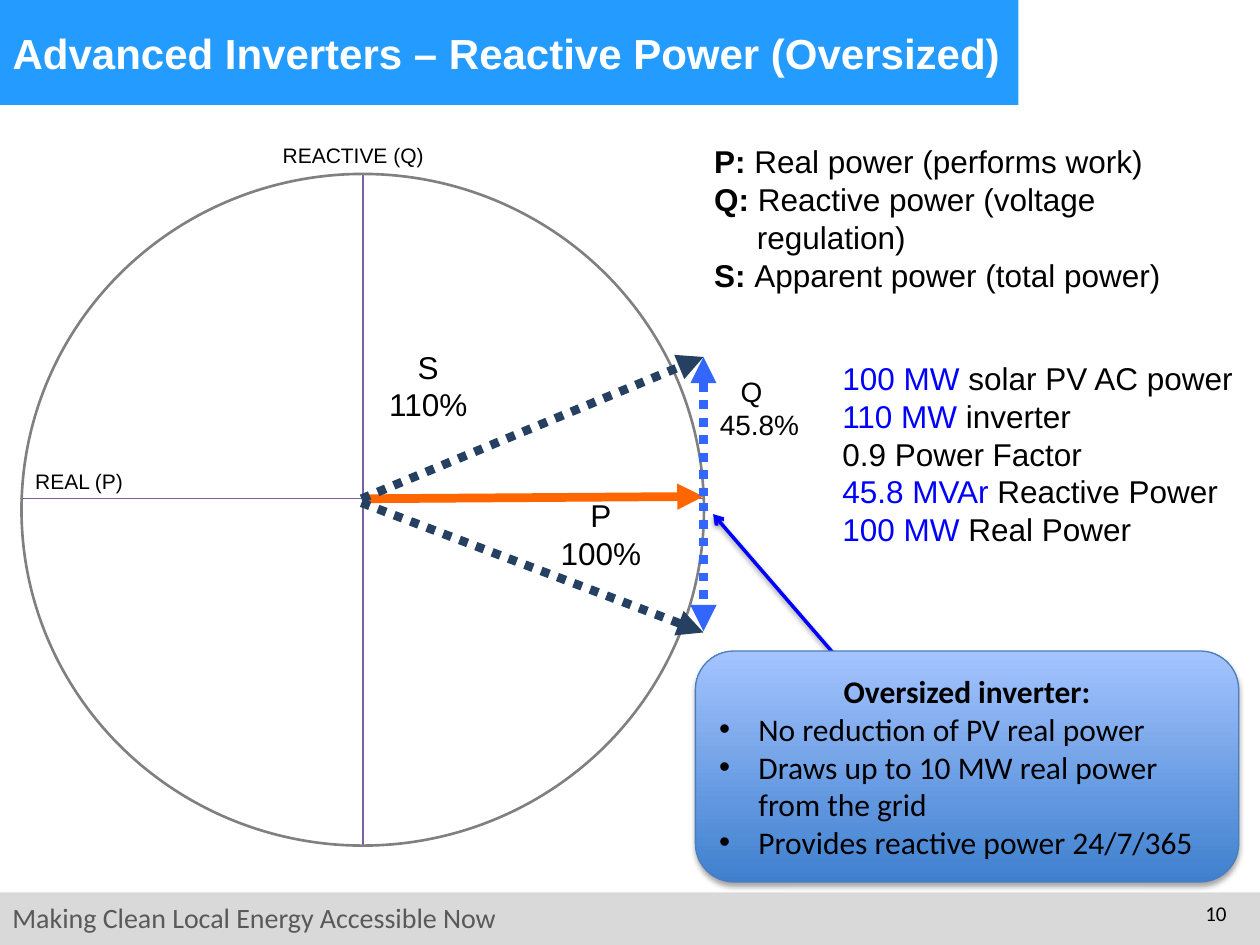
import pptx
import pptx.dml.color
import pptx.enum.dml
import pptx.enum.shapes
import pptx.enum.text
import pptx.oxml
import pptx.oxml.ns
import pptx.util

Pt = pptx.util.Pt
RGBColor = pptx.dml.color.RGBColor
Align = pptx.enum.text.PP_ALIGN
Anchor = pptx.enum.text.MSO_ANCHOR
Shape = pptx.enum.shapes.MSO_SHAPE

BLACK = RGBColor(0x00, 0x00, 0x00)
WHITE = RGBColor(0xFF, 0xFF, 0xFF)
BANNER = RGBColor(0x24, 0x9C, 0xFF)
FOOTER = RGBColor(0xD9, 0xD9, 0xD9)
FOOTER_TEXT = RGBColor(0x59, 0x59, 0x59)
AXIS = RGBColor(0x7D, 0x60, 0xA0)
CIRCLE = RGBColor(0x80, 0x80, 0x80)
REAL = RGBColor(0xFF, 0x66, 0x00)
APPARENT = RGBColor(0x25, 0x40, 0x61)
REACTIVE = RGBColor(0x33, 0x66, 0xFF)
HIGHLIGHT = RGBColor(0x00, 0x00, 0xFF)
CALLOUT_EDGE = RGBColor(0x4B, 0x7E, 0xBC)
CALLOUT_DARK = RGBColor(0x3F, 0x80, 0xCE)
CALLOUT_LIGHT = RGBColor(0xA4, 0xC4, 0xFF)


def add_child(parent, tag, **attributes):
    """Append a DrawingML element and return it."""
    child = pptx.oxml.parse_xml(f"<a:{tag} {pptx.oxml.ns.nsdecls('a')}/>")
    for name, value in attributes.items():
        child.set(name, str(value))
    parent.append(child)
    return child


def set_shadow(shape, opacity=0, distance=0):
    """Replace the theme shadow with a soft downward one, or with none."""
    effects = add_child(shape._element.spPr, "effectLst")
    if opacity:
        shadow = add_child(effects, "outerShdw", blurRad=Pt(3.1), dist=Pt(distance),
                           dir=90 * 60000, rotWithShape=0)
        color = add_child(shadow, "srgbClr", val=BLACK)
        add_child(color, "alpha", val=opacity * 1000)


def write_text(para, text, size=18, font="Arial", color=BLACK, bold=False):
    """Add one formatted span of text to a paragraph."""
    span = para.add_run()
    span.text = text
    span.font.size = Pt(size)
    span.font.name = font
    span.font.bold = bold
    span.font.color.rgb = color


def write_lines(frame, lines, align=Align.LEFT, indent=0, hanging=0, bullet=None, **style):
    """Write each line, given as (text, overrides) spans, as a paragraph."""
    for line in lines:
        first = not frame.paragraphs[0].runs
        para = frame.paragraphs[0] if first else frame.add_paragraph()
        para.alignment = align
        properties = para._p.get_or_add_pPr()
        properties.set("marL", str(Pt(indent)))
        properties.set("indent", str(Pt(-hanging)))
        if bullet:
            add_child(properties, "buFont", typeface="Arial")
            add_child(properties, "buChar", char=bullet)
        for text, overrides in line:
            write_text(para, text, **{**style, **overrides})


def plain(*texts):
    """Turn texts into lines of one span each."""
    return [[(text, {})] for text in texts]


def add_label(page, bounds, lines, wrap=True, **style):
    """Add a text box holding the given lines."""
    box = page.shapes.add_textbox(*map(Pt, bounds))
    box.text_frame.word_wrap = wrap
    write_lines(box.text_frame, lines, **style)
    return box


def add_band(page, bounds, color):
    """Add a borderless filled rectangle."""
    band = page.shapes.add_shape(Shape.RECTANGLE, *map(Pt, bounds))
    band.fill.solid()
    band.fill.fore_color.rgb = color
    band.line.fill.background()
    set_shadow(band)


def add_line(page, start, end, color, width, head=None, dotted=False, **shadow):
    """Add a straight line, optionally dotted and with an arrowhead at its end."""
    points = map(Pt, (*start, *end))
    line = page.shapes.add_connector(pptx.enum.shapes.MSO_CONNECTOR.STRAIGHT, *points)
    line.line.color.rgb = color
    line.line.width = Pt(width)
    if dotted:
        line.line.dash_style = pptx.enum.dml.MSO_LINE.ROUND_DOT
    if head:
        add_child(line.line._get_or_add_ln(), "tailEnd", type=head)
    set_shadow(line, **shadow)


def add_title(page, text):
    """Place the title placeholder over the banner."""
    title = page.shapes.title
    title.left, title.top, title.width, title.height = map(Pt, (0, 0, 594, 60))
    page.shapes._spTree.append(title._element)
    title.text_frame.vertical_anchor = Anchor.MIDDLE
    write_lines(title.text_frame, plain(text), size=24, color=WHITE, bold=True)


def add_circle(page, bounds):
    """Add the outline of the apparent power circle."""
    circle = page.shapes.add_shape(Shape.OVAL, *map(Pt, bounds))
    circle.fill.background()
    circle.line.color.rgb = CIRCLE
    circle.line.width = Pt(1.5)
    set_shadow(circle)


def add_callout(page, bounds, heading, points):
    """Add the rounded gradient panel with a heading and bullets."""
    panel = page.shapes.add_shape(Shape.ROUNDED_RECTANGLE, *map(Pt, bounds))
    panel.fill.gradient()
    panel.fill.gradient_angle = 90
    for stop, color, position in zip(panel.fill.gradient_stops,
                                     (CALLOUT_DARK, CALLOUT_LIGHT), (0, 1)):
        stop.color.rgb = color
        stop.position = position
    panel.line.color.rgb = CALLOUT_EDGE
    panel.line.width = Pt(0.75)
    set_shadow(panel, opacity=35, distance=1.8)
    frame = panel.text_frame
    frame.word_wrap = True
    frame.vertical_anchor = Anchor.MIDDLE
    write_lines(frame, plain(heading), align=Align.CENTER, font="Calibri", bold=True)
    write_lines(frame, plain(*points), indent=22.5, hanging=22.5, bullet="•", font="Calibri")


def add_diagram(page):
    """Draw the power circle, its axes, vectors and labels."""
    add_line(page, (207.4, 99.4), (207.4, 483), AXIS, 0.75)
    add_line(page, (11.5, 285), (402, 285), AXIS, 0.75)
    add_circle(page, (12.3, 99.4, 390, 383.8))
    add_line(page, (210, 285), (402, 283.7), REAL, 5, "triangle")
    for start, end, color in (
        ((206.6, 285), (402, 204), APPARENT),
        ((402, 283.7), (402, 204), REACTIVE),
        ((402, 287.3), (402, 360.7), REACTIVE),
        ((206.6, 287.3), (402, 361.4), APPARENT),
    ):
        add_line(page, start, end, color, 5, "triangle", dotted=True)

    add_label(page, (310.3, 280, 66.2, 51), plain("P", "100%"), align=Align.CENTER)
    add_label(page, (210.2, 195.1, 69.1, 51), plain("S", "110%"), align=Align.CENTER)
    reactive = add_label(page, (391, 210.2, 77, 46), plain("Q"), align=Align.CENTER, size=16)
    write_lines(reactive.text_frame, plain("45.8%"), align=Align.CENTER, indent=9, size=16)
    add_label(page, (149, 77.8, 105.8, 21.6), plain("REACTIVE (Q)"),
              align=Align.CENTER, size=12)
    add_label(page, (13, 264.2, 113.8, 21.6), plain("REAL (P)"), size=12)


def main():
    """Build the slide and save it."""
    deck = pptx.Presentation()
    deck.slide_width, deck.slide_height = Pt(720), Pt(540)
    page = deck.slides.add_slide(deck.slide_layouts[5])

    add_band(page, (0, 510, 720, 30), FOOTER)
    add_label(page, (0, 511.2, 372, 26.6), plain("Making Clean Local Energy Accessible Now"),
              size=16, font="Calibri", color=FOOTER_TEXT)
    add_band(page, (0, 0, 582, 60), BANNER)
    add_label(page, (672, 511.2, 36, 28.8), plain("10"),
              align=Align.RIGHT, size=12, font="Calibri")
    add_title(page, "Advanced Inverters – Reactive Power (Oversized)")
    add_diagram(page)

    blue, strong = {"color": HIGHLIGHT}, {"bold": True}
    add_label(page, (474.2, 201.6, 240, 116.6), [
        [("100 MW ", blue), ("solar PV AC power", {})],
        [("110 MW ", blue), ("inverter", {})],
        [("0.9 Power Factor", {})],
        [("45.8 MVAr ", blue), ("Reactive Power", {})],
        [("100 MW ", blue), ("Real Power", {})],
    ], wrap=False)
    add_line(page, (485.3, 383.8), (407.5, 293.8), HIGHLIGHT, 2, "arrow",
             opacity=38, distance=1.6)
    add_callout(page, (397.4, 372, 310.5, 132), "Oversized inverter:", (
        "No reduction of PV real power",
        "Draws up to 10 MW real power from the grid",
        "Provides reactive power 24/7/365",
    ))
    add_label(page, (401, 77.8, 306.7, 94.3), [
        [("P: ", strong), ("Real power (performs work)", {})],
        [("Q: ", strong), ("Reactive power (voltage regulation)", {})],
        [("S: ", strong), ("Apparent power (total power)", {})],
    ], indent=24.5, hanging=24.5)

    deck.save("out.pptx")


if __name__ == "__main__":
    main()
